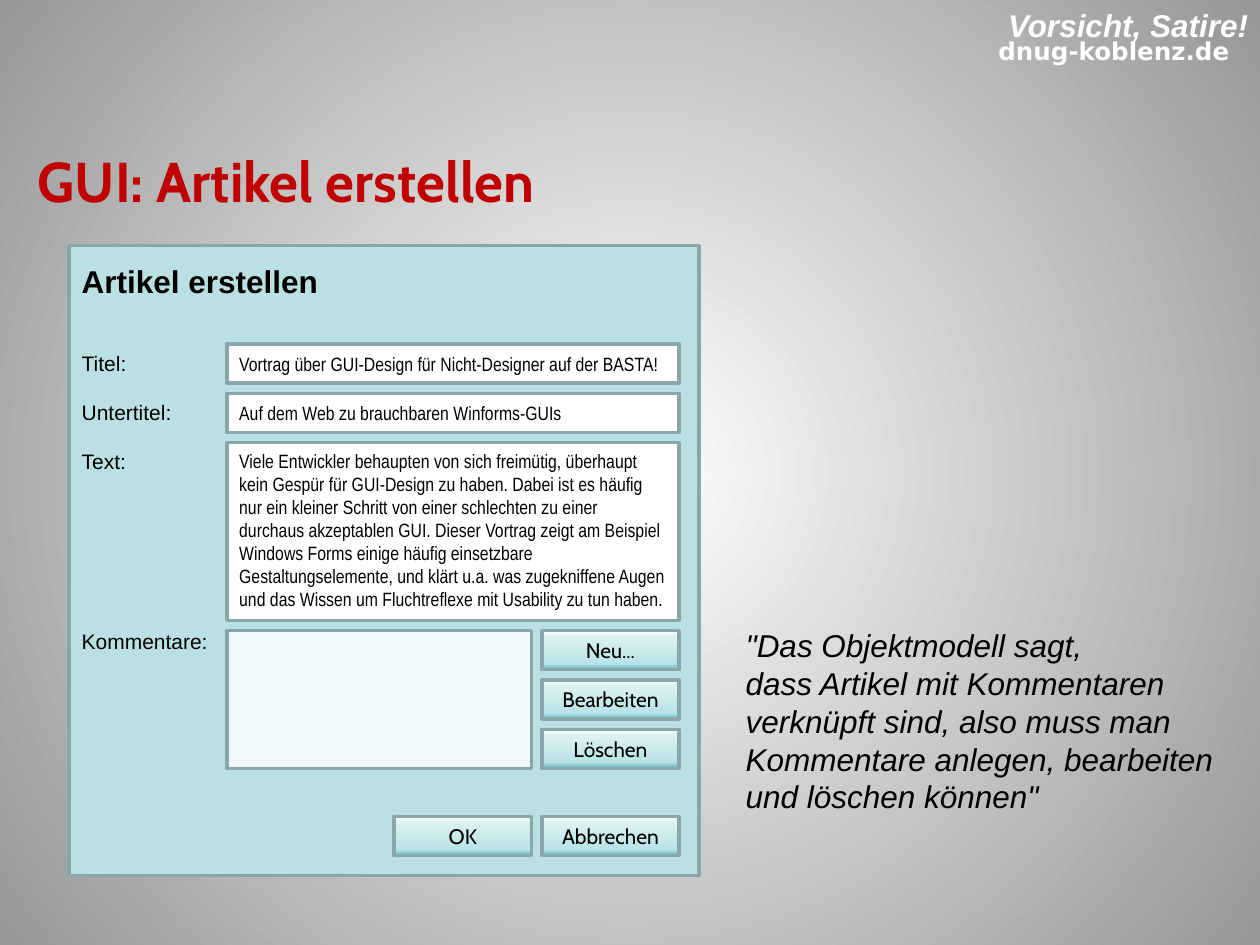
from lxml import etree
from pptx import Presentation
from pptx import util as u
from pptx.dml.color import RGBColor
from pptx.enum import shapes, text
from pptx.oxml import ns

Pt = u.Pt
LEFT, CENTER = text.PP_ALIGN.LEFT, text.PP_ALIGN.CENTER
TOP, MIDDLE = text.MSO_ANCHOR.TOP, text.MSO_ANCHOR.MIDDLE


class Theme:
    border, panel, field, comments = "8AA6A8", "BBE0E3", "FFFFFF", "EFF9F9"
    button_stops = [(0, "FFFFFF"), (15, "DEF1F2"), (85, "B8E3E6"), (100, "50B8C0")]
    backdrop_stops = [(0, "FFFFFF"), (100, "979797")]
    title_shadow = "606060"
    line_width = 2
    title = dict(name="Cabin", size=32, color="C00000", bold=True)
    site = dict(name="DejaVu Sans", size=14, color="FFFFFF", bold=True)
    warning = dict(name="Arial", size=18, color="FFFFFF", bold=True, italic=True)
    heading = dict(name="Arial", size=18, color="000000", bold=True)
    label = dict(name="Arial", size=12, color="000000")
    entry = dict(name="Arial Narrow", size=11, color="000000")
    button = dict(name="Cabin", size=12, color="000000")
    quote = dict(name="Arial", size=18, color="000000", italic=True)


def write(shape, content, style, align=LEFT, anchor=TOP, wrap=True):
    frame = shape.text_frame
    frame.text = content
    frame.word_wrap = wrap
    frame.vertical_anchor = anchor
    frame.auto_size = text.MSO_AUTO_SIZE.NONE
    for paragraph in frame.paragraphs:
        paragraph.alignment = align
        for run in paragraph.runs:
            for key, value in style.items():
                if key == "color":
                    run.font.color.rgb = RGBColor.from_string(value)
                else:
                    setattr(run.font, key, Pt(value) if key == "size" else value)


def add_text(slide, box, content, style, **options):
    shape = slide.shapes.add_textbox(*map(Pt, box))
    write(shape, content, style, **options)
    return shape


def set_gradient(fill, owner, stops, direction):
    """Give a fill any number of stops; direction is the closing XML element."""
    fill.gradient()
    gradient = next(owner.iter(ns.qn("a:gradFill")))
    stop_xml = "".join(
        f'<a:gs pos="{place * 1000}"><a:srgbClr val="{color}"/></a:gs>'
        for place, color in stops)
    source = etree.fromstring(
        f'<a:gradFill {ns.nsdecls("a")}><a:gsLst>{stop_xml}</a:gsLst>{direction}</a:gradFill>')
    gradient[:] = list(source)


def add_panel(slide, box, color=None):
    """Bordered rectangle; without a colour it gets the button gradient."""
    shape = slide.shapes.add_shape(shapes.MSO_SHAPE.RECTANGLE, *map(Pt, box))
    shape.shadow.inherit = False
    shape.line.color.rgb = RGBColor.from_string(Theme.border)
    shape.line.width = Pt(Theme.line_width)
    if color:
        shape.fill.solid()
        shape.fill.fore_color.rgb = RGBColor.from_string(color)
    else:
        set_gradient(shape.fill, shape._element, Theme.button_stops,
                     '<a:lin ang="5400000" scaled="0"/>')
    return shape


def add_button(slide, box, caption):
    write(add_panel(slide, box), caption, Theme.button, align=CENTER, anchor=MIDDLE)


def add_backdrop(slide):
    set_gradient(
        slide.background.fill, slide._element, Theme.backdrop_stops,
        '<a:path path="circle">'
        '<a:fillToRect l="50000" t="50000" r="50000" b="50000"/></a:path>')


def add_header(slide, box):
    left, top, width, height = box
    add_text(slide, (left + width - 167, top + 15, 167, 28), "dnug-koblenz.de",
             Theme.site, align=CENTER, anchor=MIDDLE)
    add_text(slide, (left + width - 152, top, 153.4, 29), "Vorsicht, Satire!",
             Theme.warning, align=CENTER, wrap=False)


def place_title(slide, box, content):
    title = slide.shapes.title
    title.left, title.top, title.width, title.height = map(Pt, box)
    write(title, content, Theme.title, anchor=MIDDLE)
    properties = title.text_frame.paragraphs[0].runs[0]._r.get_or_add_rPr()
    shadow = etree.fromstring(
        f'<a:effectLst {ns.nsdecls("a")}><a:outerShdw dist="25400" dir="2700000">'
        f'<a:srgbClr val="{Theme.title_shadow}"/></a:outerShdw></a:effectLst>')
    properties.find(ns.qn("a:solidFill")).addnext(shadow)


def add_dialog(slide, box):
    left, top, width, height = box
    margin, gap, row = 11.5, 5.9, 22.3
    button_width, body_height = 78.5, 101.5
    field_left, right = left + 90, left + width - margin
    button_left = right - button_width

    add_panel(slide, box, Theme.panel)
    add_text(slide, (left, top + 6, 214, 29), "Artikel erstellen", Theme.heading)

    # Labelled text fields
    entries = [
        ("Titel:", row, MIDDLE, "Vortrag über GUI-Design für Nicht-Designer auf der BASTA!"),
        ("Untertitel:", row, MIDDLE, "Auf dem Web zu brauchbaren Winforms-GUIs"),
        ("Text:", body_height, TOP,
         "Viele Entwickler behaupten von sich freimütig, überhaupt kein Gespür für "
         "GUI-Design zu haben. Dabei ist es häufig nur ein kleiner Schritt von einer "
         "schlechten zu einer durchaus akzeptablen GUI. Dieser Vortrag zeigt am Beispiel "
         "Windows Forms einige häufig einsetzbare Gestaltungselemente, und klärt u.a. "
         "was zugekniffene Augen und das Wissen um Fluchtreflexe mit Usability zu tun haben."),
    ]
    y = top + 56.2
    for label, field_height, anchor, content in entries:
        add_text(slide, (left, y, 90, 21.6), label, Theme.label)
        field = add_panel(slide, (field_left, y, right - field_left, field_height), Theme.field)
        write(field, content, Theme.entry, anchor=anchor)
        y += field_height + gap

    # Comment list with its buttons
    add_text(slide, (left, y - 5, 90, 21.6), "Kommentare:", Theme.label)
    add_panel(slide, (field_left, y, button_left - gap - field_left, 3 * row + 2 * gap),
              Theme.comments)
    for index, caption in enumerate(["Neu...", "Bearbeiten", "Löschen"]):
        add_button(slide, (button_left, y + index * (row + gap), button_width, row), caption)

    # Closing buttons, from the right edge inwards
    for index, caption in enumerate(["Abbrechen", "OK"]):
        add_button(slide, (button_left - index * (button_width + gap),
                           top + height - margin - row, button_width, row), caption)


def add_quote(slide, box):
    add_text(slide, box,
             '"Das Objektmodell sagt,\ndass Artikel mit Kommentaren\v'
             'verknüpft sind, also muss man\vKommentare anlegen, bearbeiten\v'
             'und löschen können"', Theme.quote, wrap=False)


def main():
    presentation = Presentation()
    presentation.slide_width, presentation.slide_height = Pt(720), Pt(540)
    slide = presentation.slides.add_slide(presentation.slide_layouts[5])
    add_backdrop(slide)
    add_header(slide, (0, 0, 720, 43))
    place_title(slide, (14.4, 65.5, 692, 75), "GUI: Artikel erstellen")
    add_dialog(slide, (39.6, 140.4, 360, 360))
    add_quote(slide, (419, 354.3, 284.4, 116.6))
    presentation.save("out.pptx")


if __name__ == "__main__":
    main()
